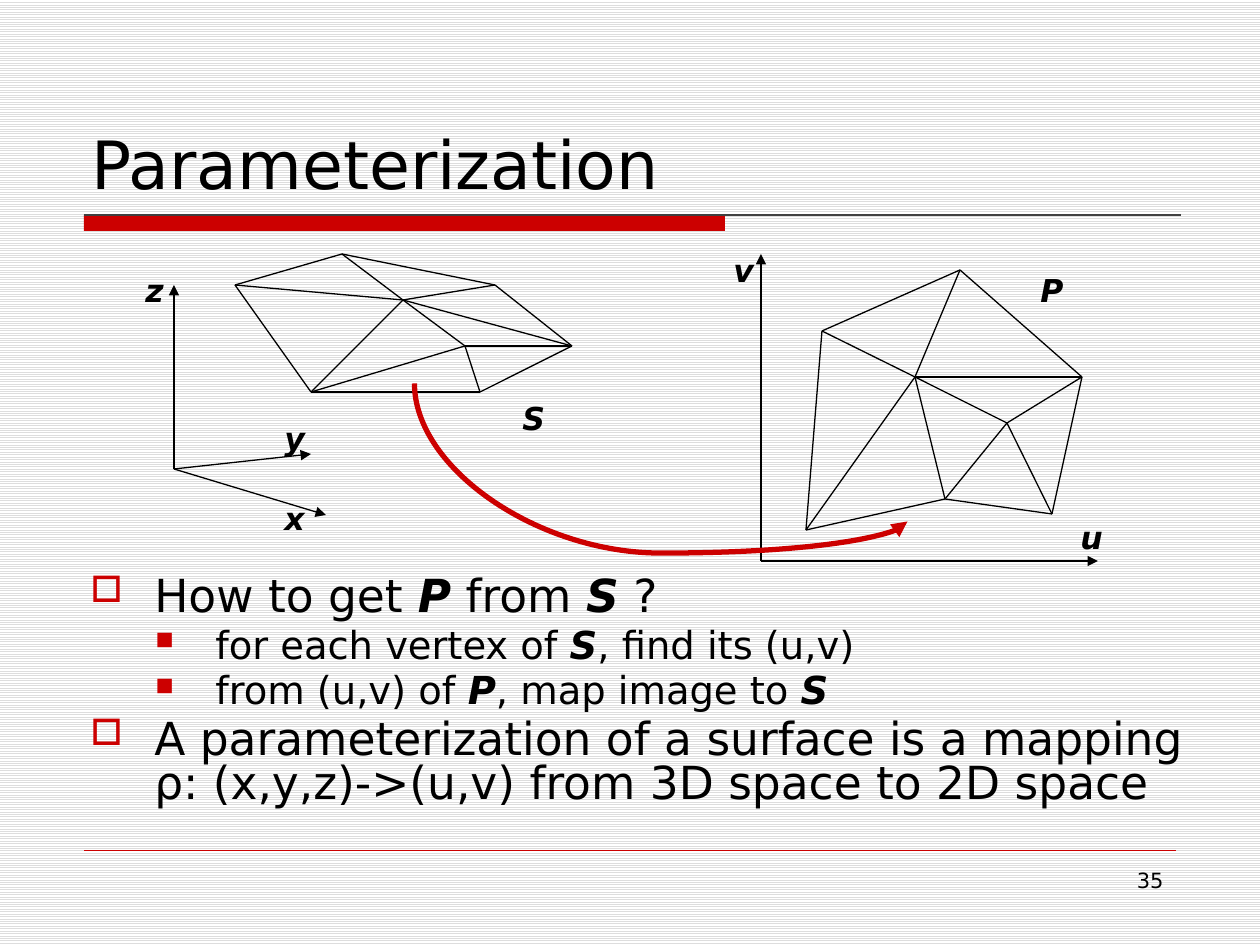
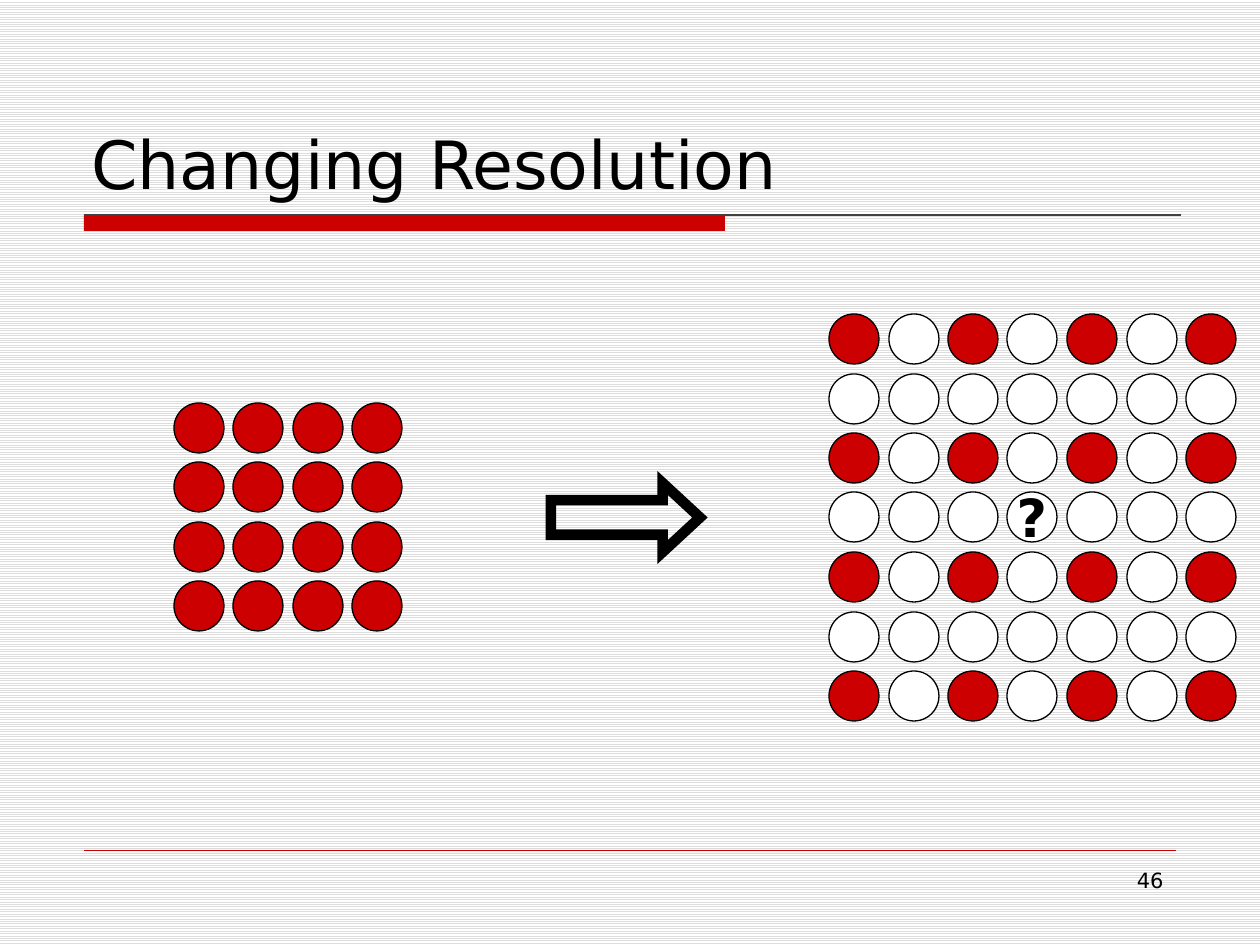
from typing import NamedTuple

from lxml.etree import SubElement
from pptx import Presentation
from pptx.dml.color import RGBColor
from pptx.enum.dml import MSO_PATTERN
from pptx.enum.shapes import MSO_CONNECTOR as LINK, MSO_SHAPE as SHAPE
from pptx.enum.text import MSO_ANCHOR as ANCHOR, MSO_AUTO_SIZE as AUTO_SIZE, PP_ALIGN as ALIGN
from pptx.oxml.ns import qn
from pptx.util import Pt

EMU_PER_PX = 914400 / 126
FONT = "DejaVu Sans"
RED, BLACK, WHITE = "CC0000", "000000", "FFFFFF"
STRIPE, TITLE_RULE = "DDDDDD", "404040"
DOT_SIZE = 50


class Point(NamedTuple):
    x: int
    y: int


class Box(NamedTuple):
    left: int
    top: int
    width: int
    height: int


class Label(NamedTuple):
    text: str
    box: Box


class Mesh(NamedTuple):
    """A ring of six vertices around a hub, with one more vertex inside."""
    rim: list[Point]
    hub: Point
    inner: Point


class Diagram(NamedTuple):
    origin: Point
    axis_tips: list[Point]
    mesh: Mesh
    labels: list[Label]


class BulletStyle(NamedTuple):
    mark: str
    mark_percent: int
    size: int
    margin: int
    hanging: int


class Bullet(NamedTuple):
    """Text between asterisks is bold italic."""
    level: int
    text: str


class DotGrid(NamedTuple):
    corner: Point
    span: int
    count: int
    known_step: int


BULLET_STYLES = [BulletStyle("□", 80, 26, 64, 64), BulletStyle("■", 65, 22, 125, 60)]

SURFACE = Diagram(
    Point(174, 469),
    [Point(326, 515), Point(174, 285), Point(311, 454)],
    Mesh(
        [Point(235, 285), Point(342, 254), Point(495, 285),
         Point(572, 346), Point(480, 392), Point(311, 392)],
        Point(403, 300), Point(465, 346)),
    [Label("S", Box(510, 393, 48, 50)), Label("x", Box(272, 493, 47, 50)),
     Label("y", Box(272, 413, 45, 50)), Label("z", Box(133, 265, 44, 50))])

PLANE = Diagram(
    Point(761, 561),
    [Point(1098, 561), Point(761, 254)],
    Mesh(
        [Point(806, 530), Point(822, 331), Point(960, 270),
         Point(1082, 377), Point(1052, 514), Point(945, 499)],
        Point(915, 377), Point(1007, 423)),
    [Label("P", Box(1028, 265, 49, 50)), Label("u", Box(1068, 512, 48, 50)),
     Label("v", Box(721, 245, 45, 50))])

BULLETS = [
    Bullet(0, "How to get *P* from *S* ?"),
    Bullet(1, "for each vertex of *S*, find its (u,v)"),
    Bullet(1, "from (u,v) of *P*, map image to *S*"),
    Bullet(0, "A parameterization of a surface is a mapping "
              "ρ: (x,y,z)->(u,v) from 3D space to 2D space"),
]

COARSE = DotGrid(Point(174, 403), 178, 4, 1)
FINE = DotGrid(Point(829, 314), 357, 7, 2)


def px(length: float) -> int:
    return round(length * EMU_PER_PX)


def emu(lengths: tuple) -> list[int]:
    return [px(length) for length in lengths]


def rgb(color: str) -> RGBColor:
    return RGBColor.from_string(color)


def set_line(shape, color: str, points: float) -> None:
    shape.line.color.rgb = rgb(color)
    shape.line.width = Pt(points)


def add_line(shapes, start: Point, end: Point, color: str = BLACK,
             points: float = 0.75, arrow: bool = False, kind=LINK.STRAIGHT):
    line = shapes.add_connector(kind, *emu(start), *emu(end))
    set_line(line, color, points)
    properties = line.element.spPr
    if arrow:
        SubElement(properties.find(qn("a:ln")), qn("a:tailEnd"), type="triangle")
    SubElement(properties, qn("a:effectLst"))
    return line


def add_preset(shapes, kind, box: Box, fill: str | None = None, outline: str | None = None,
               points: float = 0.75):
    shape = shapes.add_shape(kind, *emu(box))
    shape.shadow.inherit = False
    if fill:
        shape.fill.solid()
        shape.fill.fore_color.rgb = rgb(fill)
    else:
        shape.fill.background()
    if outline:
        set_line(shape, outline, points)
    else:
        shape.line.fill.background()
    return shape


def set_font(paragraph, size: int) -> None:
    paragraph.font.name = FONT
    paragraph.font.size = Pt(size)
    paragraph.font.color.rgb = rgb(BLACK)


def add_text(shapes, text: str, box: Box, size: int, wrap: bool = True,
             anchor=ANCHOR.TOP, align=ALIGN.LEFT):
    frame = shapes.add_textbox(*emu(box)).text_frame
    frame.word_wrap = wrap
    frame.vertical_anchor = anchor
    paragraph = frame.paragraphs[0]
    paragraph.text = text
    paragraph.alignment = align
    set_font(paragraph, size)
    return frame


def add_base_slide(deck, title: str, number: int):
    """Add a slide with the striped background, title, rules and page number."""
    slide = deck.slides.add_slide(deck.slide_layouts[6])
    stripes = slide.background.fill
    stripes.patterned()
    stripes.pattern = MSO_PATTERN.LIGHT_HORIZONTAL
    stripes.fore_color.rgb = rgb(STRIPE)
    stripes.back_color.rgb = rgb(WHITE)
    shapes = slide.shapes
    add_preset(shapes, SHAPE.RECTANGLE, Box(84, 215, 641, 16), RED)
    add_line(shapes, Point(84, 215), Point(1181, 215), TITLE_RULE)
    add_line(shapes, Point(84, 850), Point(1176, 850), RED, 0.25)
    add_text(shapes, title, Box(79, 42, 1102, 167), 38, anchor=ANCHOR.BOTTOM)
    add_text(shapes, str(number), Box(903, 861, 273, 66), 12, align=ALIGN.RIGHT)
    return shapes


def mesh_edges(mesh: Mesh) -> list[tuple[Point, Point]]:
    rim = mesh.rim
    ring = list(zip(rim, rim[1:] + rim[:1]))
    hub_ends = rim[:4] + rim[5:] + [mesh.inner]
    return (ring + [(mesh.hub, vertex) for vertex in hub_ends]
            + [(mesh.inner, vertex) for vertex in rim[3:]])


def add_diagram(shapes, diagram: Diagram) -> None:
    group = shapes.add_group_shape().shapes
    for tip in diagram.axis_tips:
        add_line(group, diagram.origin, tip, arrow=True)
    for start, end in mesh_edges(diagram.mesh):
        add_line(group, start, end)
    for label in diagram.labels:
        frame = add_text(group, label.text, label.box, 18, wrap=False)
        frame.auto_size = AUTO_SIZE.SHAPE_TO_FIT_TEXT
        frame.paragraphs[0].font.bold = True
        frame.paragraphs[0].font.italic = True


def add_mapping_arrow(shapes) -> None:
    """Draw the curve that leaves S downwards and enters P from below."""
    curve = add_line(shapes, Point(592, 206), Point(730, 699), RED, 3, True, LINK.CURVE)
    properties = curve.element.spPr
    frame = properties.find(qn("a:xfrm"))
    frame.set("rot", str(270 * 60000))
    frame.set("flipH", "1")
    geometry = properties.find(qn("a:prstGeom"))
    adjustments = geometry.find(qn("a:avLst"))
    if adjustments is None:
        adjustments = SubElement(geometry, qn("a:avLst"))
    SubElement(adjustments, qn("a:gd"), name="adj1", fmla="val 122900")


def set_bullet(paragraph, style: BulletStyle) -> None:
    properties = paragraph._p.get_or_add_pPr()
    properties.set("marL", str(px(style.margin)))
    properties.set("indent", str(-px(style.hanging)))
    color = SubElement(properties, qn("a:buClr"))
    SubElement(color, qn("a:srgbClr"), val=RED)
    SubElement(properties, qn("a:buSzPct"), val=str(style.mark_percent * 1000))
    SubElement(properties, qn("a:buChar"), char=style.mark)


def add_bullets(shapes, bullets: list[Bullet], box: Box) -> None:
    frame = shapes.add_textbox(*emu(box)).text_frame
    frame.word_wrap = True
    for index, bullet in enumerate(bullets):
        paragraph = frame.add_paragraph() if index else frame.paragraphs[0]
        style = BULLET_STYLES[bullet.level]
        paragraph.level = bullet.level
        paragraph.line_spacing = 0.8
        if index:
            paragraph.space_before = Pt(5)
        set_bullet(paragraph, style)
        set_font(paragraph, style.size)
        for part, text in enumerate(bullet.text.split("*")):
            if text:
                run = paragraph.add_run()
                run.text = text
                if part % 2:
                    run.font.bold = run.font.italic = True


def add_dots(shapes, grid: DotGrid) -> list[list]:
    """Draw the samples by row; those off the known step are white."""
    group = shapes.add_group_shape().shapes
    offsets = [round(grid.span * i / (grid.count - 1)) for i in range(grid.count)]
    rows = []
    for row, down in enumerate(offsets):
        rows.append([])
        for column, across in enumerate(offsets):
            known = row % grid.known_step == 0 and column % grid.known_step == 0
            box = Box(grid.corner.x + across, grid.corner.y + down, DOT_SIZE, DOT_SIZE)
            rows[-1].append(add_preset(group, SHAPE.OVAL, box, RED if known else WHITE, BLACK))
    return rows


def build_parameterization(deck) -> None:
    shapes = add_base_slide(deck, "Parameterization", 35)
    add_diagram(shapes, SURFACE)
    add_bullets(shapes, BULLETS, Box(78, 571, 1123, 278))
    add_diagram(shapes, PLANE)
    add_mapping_arrow(shapes)


def build_resolution(deck) -> None:
    shapes = add_base_slide(deck, "Changing Resolution", 46)
    add_dots(shapes, COARSE)
    arrow = add_preset(shapes, SHAPE.RIGHT_ARROW, Box(551, 483, 149, 69), None, BLACK, 6)
    arrow.adjustments[0] = 0.5
    arrow.adjustments[1] = 0.54
    SubElement(arrow.element.spPr.find(qn("a:ln")), qn("a:miter"), lim="800000")

    middle = FINE.count // 2
    unknown = add_dots(shapes, FINE)[middle][middle].text_frame
    unknown.word_wrap = False
    unknown.vertical_anchor = ANCHOR.MIDDLE
    question = unknown.paragraphs[0]
    question.text = "?"
    question.alignment = ALIGN.CENTER
    set_font(question, 30)
    question.font.bold = True


def main() -> None:
    deck = Presentation()
    deck.slide_width, deck.slide_height = px(1260), px(945)
    build_parameterization(deck)
    build_resolution(deck)
    deck.save("out.pptx")


if __name__ == "__main__":
    main()
